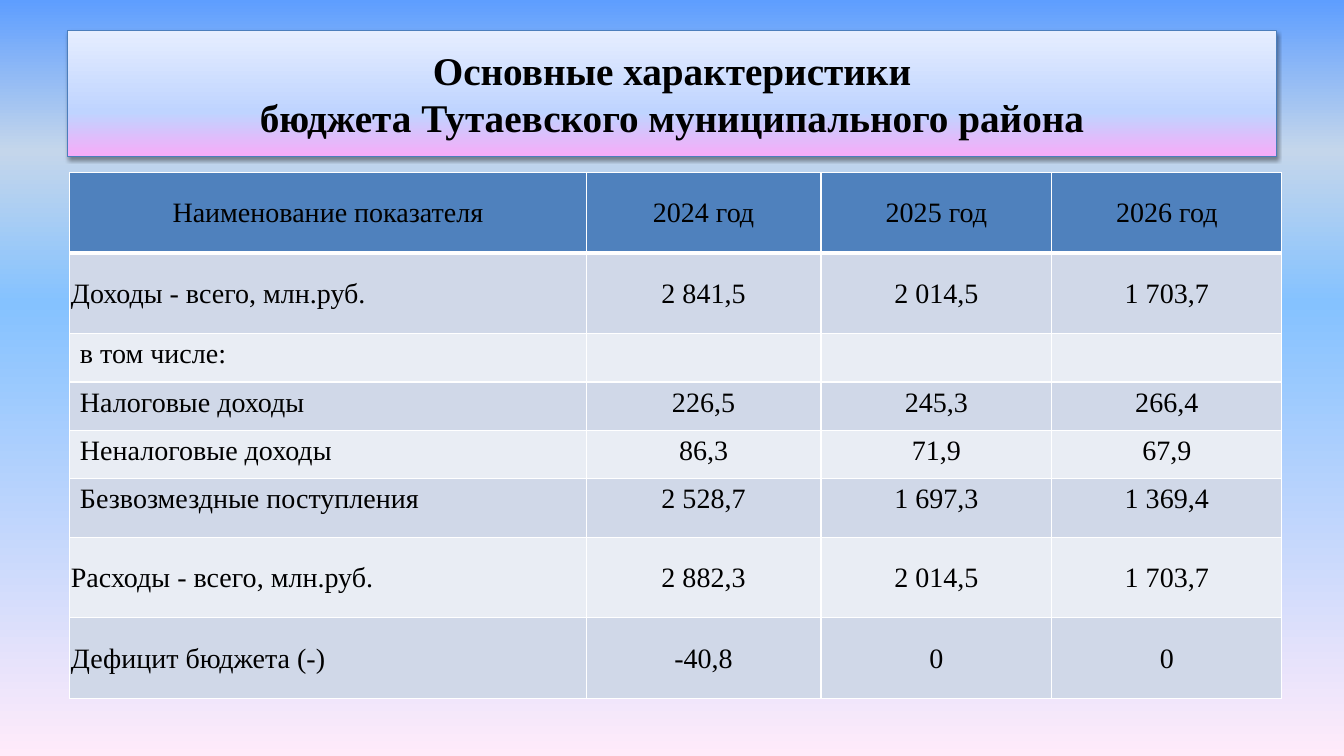
from dataclasses import dataclass

from lxml import etree
from pptx import Presentation
from pptx.dml.color import RGBColor
from pptx.enum.text import MSO_ANCHOR, MSO_AUTO_SIZE, PP_ALIGN
from pptx.oxml.ns import qn
from pptx.util import Emu, Inches, Pt

MIDDLE, TOP = MSO_ANCHOR.MIDDLE, MSO_ANCHOR.TOP
CENTER, LEFT = PP_ALIGN.CENTER, PP_ALIGN.LEFT
NO_FIT = MSO_AUTO_SIZE.NONE
WIDE, HIGH = Inches(13.33), Inches(7.5)
FONT = "Times New Roman"
HEAD, BANDS = "4F81BD", ("E9EDF4", "D0D8E8")
SKY = ((0, "5E9EFF"), (20, "C4D6EB"), (40, "85C2FF"), (100, "FFEBFA"))
GLOW = ((0, "E6EEFF"), (65, "BFD4FF"), (100, "F6ACF8"))
COLS = (5.12, 2.33, 2.29, 2.28)


@dataclass
class Row:
    label: str
    values: tuple[str, ...]
    height: float = 0.8
    detail: bool = False  # a component of the total above it


ROWS = (
    Row("Наименование показателя", ("2024 год", "2025 год", "2026 год")),
    Row("Доходы - всего, млн.руб.", ("2 841,5", "2 014,5", "1 703,7")),
    Row("в том числе:", ("", "", ""), 0.48, True),
    Row("Налоговые доходы", ("226,5", "245,3", "266,4"), 0.48, True),
    Row("Неналоговые доходы", ("86,3", "71,9", "67,9"), 0.48, True),
    Row("Безвозмездные поступления", ("2 528,7", "1 697,3", "1 369,4"), 0.58, True),
    Row("Расходы - всего, млн.руб.", ("2 882,3", "2 014,5", "1 703,7")),
    Row("Дефицит бюджета (-)", ("-40,8", "0", "0")),
)


def color(code: str) -> RGBColor:
    return RGBColor.from_string(code)


def node(parent, tag: str, **attrs):
    return etree.SubElement(parent, qn(tag), {k: str(v) for k, v in attrs.items()})


def blend(fill, root, stops: tuple) -> None:
    """Fill from top to bottom with the given percent stops."""
    fill.gradient()
    fill.gradient_angle = 270
    listing = root.xpath(".//a:gsLst")[0]
    for old in list(listing):
        listing.remove(old)
    for share, code in stops:
        node(node(listing, "a:gs", pos=share * 1000), "a:srgbClr", val=code)


def write(para, text: str, size: float, bold: bool = False) -> None:
    run = para.add_run()
    run.text = text
    run.font.name, run.font.size, run.font.bold = FONT, Pt(size), bold
    run.font.color.rgb = color("000000")


def border(cell, side: str, width: float, place: int) -> None:
    props = cell._tc.get_or_add_tcPr()
    line = node(props, f"a:ln{side}", w=Pt(width))
    node(node(line, "a:solidFill"), "a:srgbClr", val="FFFFFF")
    props.insert(place, line)


def draw_title(slide) -> None:
    box = slide.shapes.title
    box.left, box.top = Emu(int(WIDE * 0.05)), Emu(int(HIGH * 0.04))
    box.width, box.height = Emu(int(WIDE * 0.9)), Emu(int(HIGH / 6))
    blend(box.fill, box.element, GLOW)
    box.line.color.rgb, box.line.width = color("4B7EBC"), Pt(0.75)
    # Soft shadow under the panel
    box.shadow.inherit = False
    effects = box.element.xpath("./p:spPr/a:effectLst")[0]
    shade = node(effects, "a:outerShdw", blurRad=Pt(3.1), dist=Pt(1.6),
                 dir=5400000, rotWithShape=0)
    node(node(shade, "a:srgbClr", val="000000"), "a:alpha", val=38000)
    # Two lines of heading
    frame = box.text_frame
    frame.auto_size, frame.word_wrap = NO_FIT, True
    frame.vertical_anchor = MIDDLE
    para = frame.paragraphs[0]
    para.alignment = CENTER
    write(para, "Основные характеристики", 28, True)
    para.add_line_break()
    write(para, "бюджета Тутаевского муниципального района", 28, True)


def draw_cell(cell, text: str, row: Row, r: int, c: int) -> None:
    cell.fill.solid()
    cell.fill.fore_color.rgb = color(BANDS[r % 2] if r else HEAD)
    cell.vertical_anchor = TOP if row.detail else MIDDLE
    side, top, base = (0.1, 0.05, 0.05) if row.detail else (0.01, 0.01, 0)
    cell.margin_left = cell.margin_right = Inches(side)
    cell.margin_top, cell.margin_bottom = Inches(top), Inches(base)
    widths = {"L": 1, "R": 1, "T": 3 if r == 1 else 1, "B": 1 if r else 3}
    for place, (edge, width) in enumerate(widths.items()):
        border(cell, edge, width, place)
    if text:
        para = cell.text_frame.paragraphs[0]
        para.alignment = LEFT if r and c == 0 else CENTER
        write(para, text, 20)


def draw_table(slide) -> None:
    height = sum(row.height for row in ROWS)
    table = slide.shapes.add_table(
        len(ROWS), len(COLS), Emu(int(WIDE * 0.052)), Emu(int(HIGH * 0.228)),
        Inches(sum(COLS)), Inches(height)).table
    table.first_row = table.horz_banding = False
    for c, width in enumerate(COLS):
        table.columns[c].width = Inches(width)
    for r, row in enumerate(ROWS):
        table.rows[r].height = Inches(row.height)
        for c, text in enumerate((row.label, *row.values)):
            draw_cell(table.cell(r, c), text, row, r, c)


def main() -> None:
    deck = Presentation()
    deck.slide_width, deck.slide_height = WIDE, HIGH
    slide = deck.slides.add_slide(deck.slide_layouts.get_by_name("Title Only"))
    blend(slide.background.fill, slide.element, SKY)
    draw_title(slide)
    draw_table(slide)
    deck.save("out.pptx")


if __name__ == "__main__":
    main()
